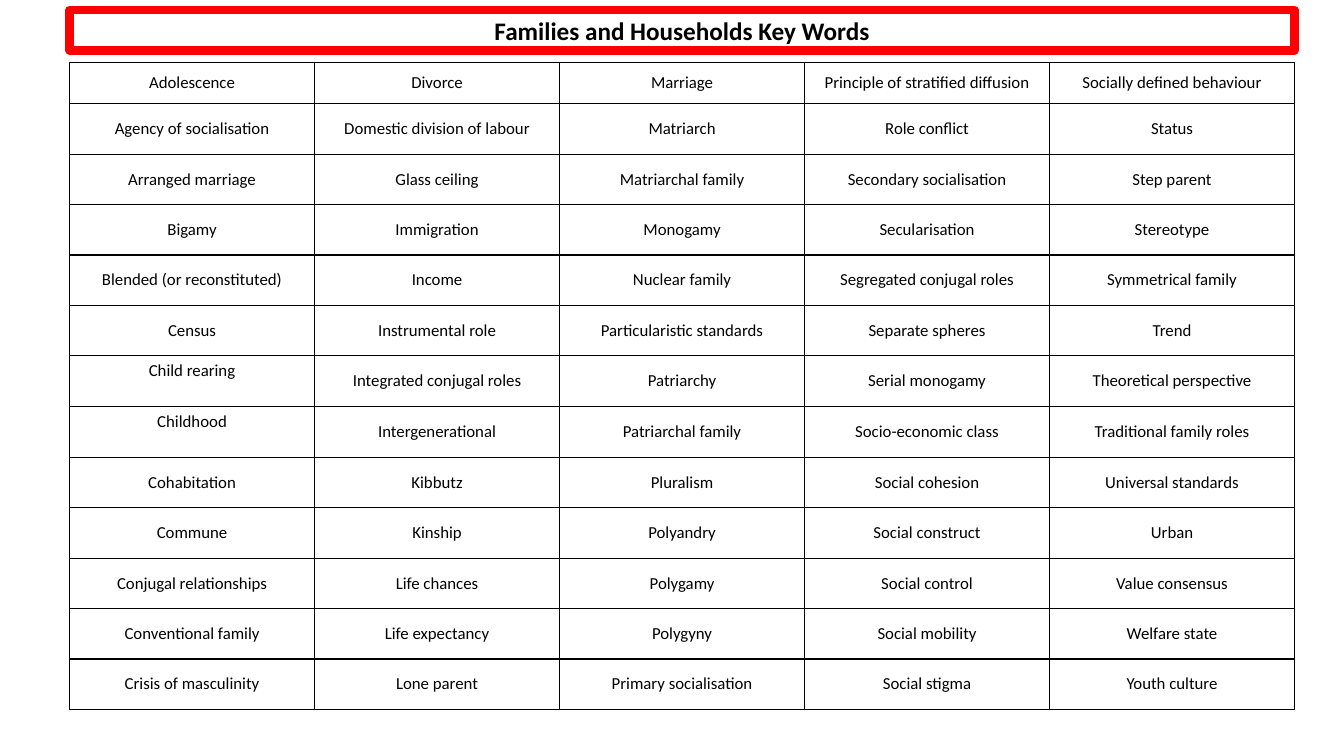
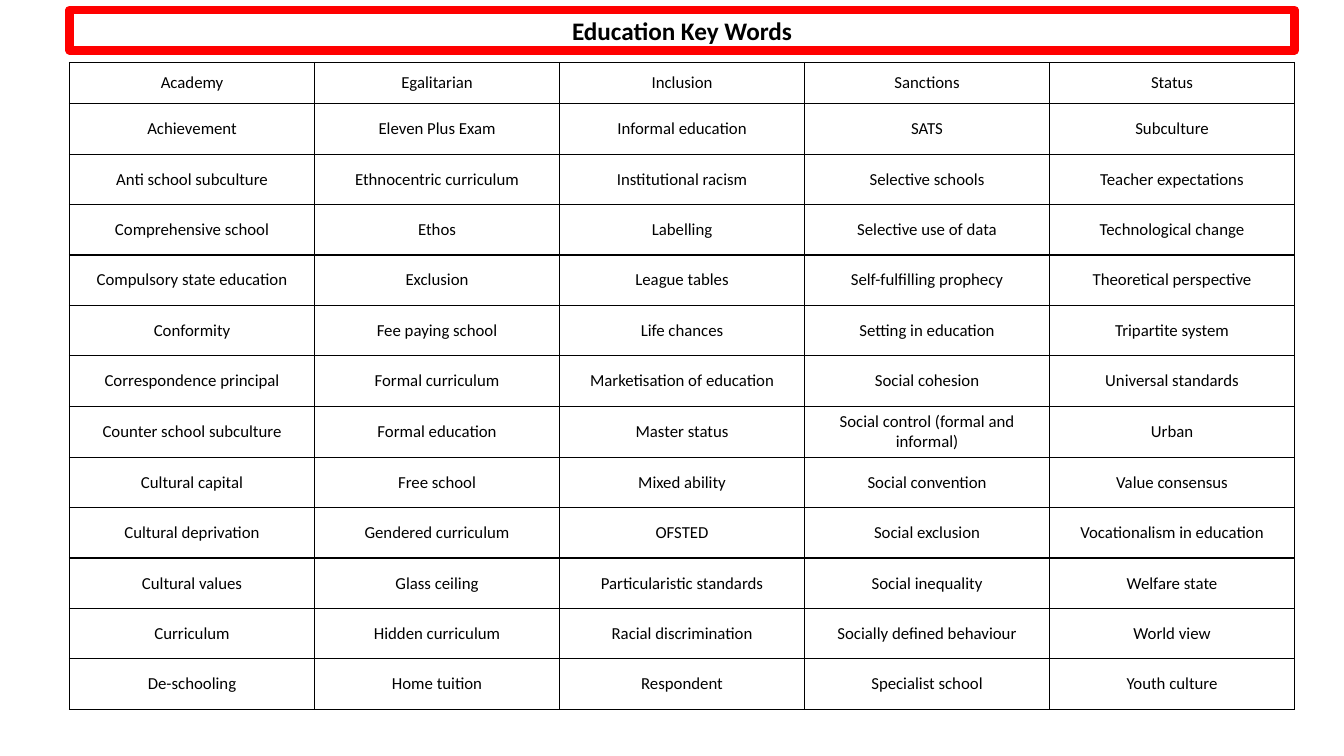
from dataclasses import dataclass
from lxml.etree import SubElement
from pptx import Presentation
from pptx.dml.color import RGBColor as RGB
from pptx.enum.text import MSO_ANCHOR as ANCHOR, MSO_AUTO_SIZE as AUTO, PP_ALIGN as ALIGN
from pptx.oxml.ns import qn
from pptx.util import Inches, Pt


@dataclass(frozen=True)
class Theme:
    font: str = "Calibri"
    ink: RGB = RGB(0, 0, 0)
    paper: RGB = RGB(255, 255, 255)
    accent: RGB = RGB(255, 0, 0)
    title_size: Pt = Pt(18)
    cell_size: Pt = Pt(12)
    frame_width: Pt = Pt(6)
    rule_width: Pt = Pt(1)


@dataclass(frozen=True)
class Grid:
    left: float = 0.69
    col: float = 2.43
    row: float = 0.5
    cols: int = 5
    title_top: float = 0.1
    title_height: float = 0.4
    table_top: float = 0.62
    head_row: float = 0.41

    @property
    def width(self):
        return self.cols * self.col


def apply(obj, **values):
    for name, value in values.items():
        setattr(obj, name, value)


class Deck:
    def __init__(self, prs, theme, grid):
        self.prs, self.theme, self.grid = prs, theme, grid
        self.s = None

    def add_slide(self):
        self.s = self.prs.slides.add_slide(self.prs.slide_layouts.get_by_name("Title Only"))

    def label(self, tf, text, size, bold=False):
        p = tf.paragraphs[0]
        p.alignment = ALIGN.CENTER
        r = p.add_run()
        r.text = text
        apply(r.font, name=self.theme.font, size=size, bold=bold)
        r.font.color.rgb = self.theme.ink

    def title(self, text):
        g, sp = self.grid, self.s.shapes.title
        apply(sp, left=Inches(g.left), top=Inches(g.title_top),
              width=Inches(g.width), height=Inches(g.title_height))
        sp.line.color.rgb = self.theme.accent
        sp.line.width = self.theme.frame_width
        apply(sp.text_frame, word_wrap=True, auto_size=AUTO.NONE,
              vertical_anchor=ANCHOR.MIDDLE)
        self.label(sp.text_frame, text, self.theme.title_size, bold=True)

    def borders(self, cell):
        tc_pr = cell._tc.get_or_add_tcPr()
        for side in ("a:lnL", "a:lnR", "a:lnT", "a:lnB"):
            ln = SubElement(tc_pr, qn(side), w=str(int(self.theme.rule_width)))
            fill = SubElement(ln, qn("a:solidFill"))
            SubElement(fill, qn("a:srgbClr"), val=str(self.theme.ink))

    def cell(self, cell, text, raised):
        self.borders(cell)
        cell.fill.solid()
        cell.fill.fore_color.rgb = self.theme.paper
        cell.vertical_anchor = ANCHOR.MIDDLE
        if raised:
            cell.margin_bottom = Inches(0.25)
        self.label(cell.text_frame, text, self.theme.cell_size)

    def word_table(self, columns, raised=()):
        g, rows = self.grid, len(columns[0])
        heights = [g.head_row] + [g.row] * (rows - 1)
        table = self.s.shapes.add_table(
            rows, g.cols, Inches(g.left), Inches(g.table_top),
            Inches(g.width), Inches(sum(heights))).table
        apply(table, first_row=False, horz_banding=False)
        for row, height in zip(table.rows, heights):
            row.height = Inches(height)
        for c, words in enumerate(columns):
            table.columns[c].width = Inches(g.col)
            for r, word in enumerate(words):
                self.cell(table.cell(r, c), word, word in raised)


FAMILIES = [
    ["Adolescence", "Agency of socialisation", "Arranged marriage", "Bigamy",
     "Blended (or reconstituted)", "Census", "Child rearing", "Childhood",
     "Cohabitation", "Commune", "Conjugal relationships", "Conventional family",
     "Crisis of masculinity"],
    ["Divorce", "Domestic division of labour", "Glass ceiling", "Immigration",
     "Income", "Instrumental role", "Integrated conjugal roles", "Intergenerational",
     "Kibbutz", "Kinship", "Life chances", "Life expectancy", "Lone parent"],
    ["Marriage", "Matriarch", "Matriarchal family", "Monogamy", "Nuclear family",
     "Particularistic standards", "Patriarchy", "Patriarchal family", "Pluralism",
     "Polyandry", "Polygamy", "Polygyny", "Primary socialisation"],
    ["Principle of stratified diffusion", "Role conflict", "Secondary socialisation",
     "Secularisation", "Segregated conjugal roles", "Separate spheres",
     "Serial monogamy", "Socio-economic class", "Social cohesion", "Social construct",
     "Social control", "Social mobility", "Social stigma"],
    ["Socially defined behaviour", "Status", "Step parent", "Stereotype",
     "Symmetrical family", "Trend", "Theoretical perspective",
     "Traditional family roles", "Universal standards", "Urban", "Value consensus",
     "Welfare state", "Youth culture"],
]

EDUCATION = [
    ["Academy", "Achievement", "Anti school subculture", "Comprehensive school",
     "Compulsory state education", "Conformity", "Correspondence principal",
     "Counter school subculture", "Cultural capital", "Cultural deprivation",
     "Cultural values", "Curriculum", "De-schooling"],
    ["Egalitarian", "Eleven Plus Exam", "Ethnocentric curriculum", "Ethos",
     "Exclusion", "Fee paying school", "Formal curriculum", "Formal education",
     "Free school", "Gendered curriculum", "Glass ceiling", "Hidden curriculum",
     "Home tuition"],
    ["Inclusion", "Informal education", "Institutional racism", "Labelling",
     "League tables", "Life chances", "Marketisation of education", "Master status",
     "Mixed ability", "OFSTED", "Particularistic standards", "Racial discrimination",
     "Respondent"],
    ["Sanctions", "SATS", "Selective schools", "Selective use of data",
     "Self-fulfilling prophecy", "Setting in education", "Social cohesion",
     "Social control (formal and informal)", "Social convention", "Social exclusion",
     "Social inequality", "Socially defined behaviour", "Specialist school"],
    ["Status", "Subculture", "Teacher expectations", "Technological change",
     "Theoretical perspective", "Tripartite system", "Universal standards", "Urban",
     "Value consensus", "Vocationalism in education", "Welfare state", "World view",
     "Youth culture"],
]


def main():
    prs = Presentation()
    apply(prs, slide_width=Inches(13.33), slide_height=Inches(7.5))
    deck = Deck(prs, Theme(), Grid())
    for title, columns, raised in (
        ("Families and Households Key Words", FAMILIES, ("Child rearing", "Childhood")),
        ("Education Key Words", EDUCATION, ()),
    ):
        deck.add_slide()
        deck.title(title)
        deck.word_table(columns, raised)
    prs.save("out.pptx")


if __name__ == "__main__":
    main()
